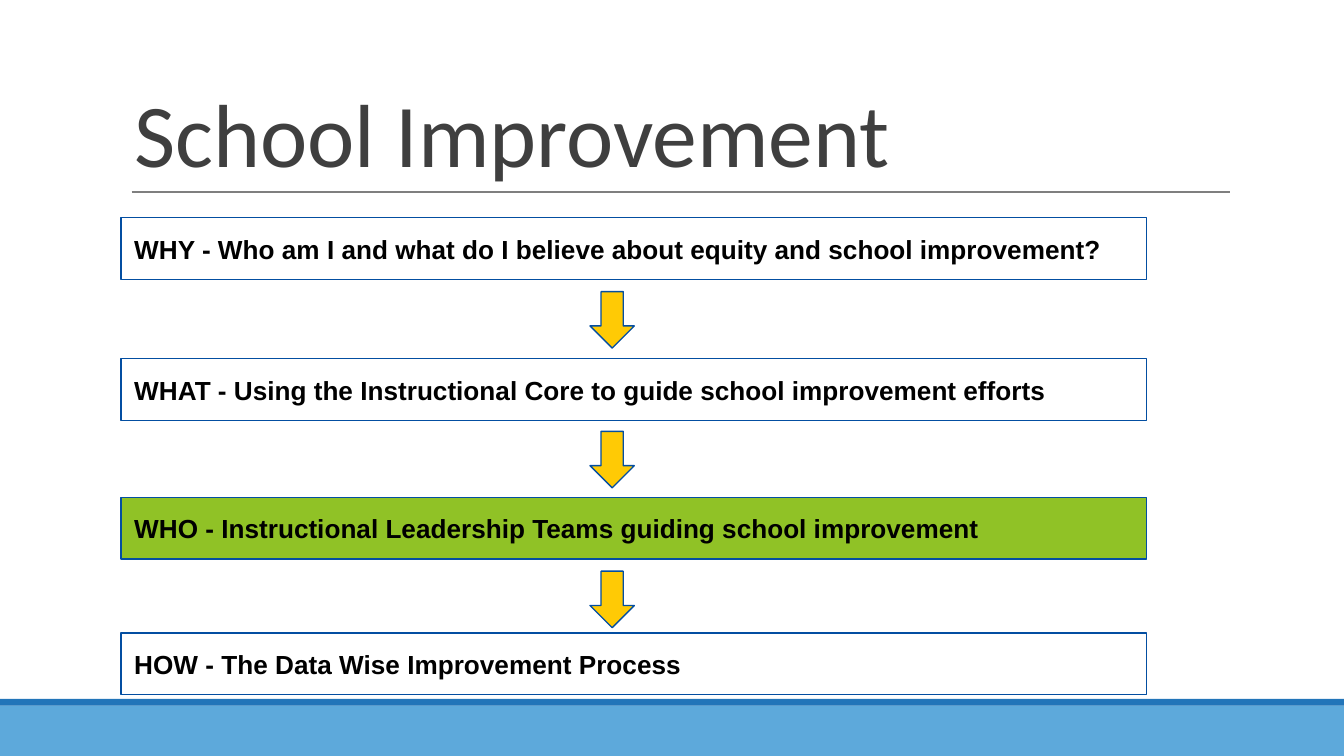
from pptx import Presentation
from pptx.dml.color import RGBColor
from pptx.enum.shapes import MSO_CONNECTOR, MSO_SHAPE
from pptx.enum.text import MSO_ANCHOR, PP_ALIGN
from pptx.oxml.ns import qn
from pptx.util import Inches, Pt
from lxml.etree import SubElement

# Content: text, top, fill
TITLE = "School Improvement"
STEPS = [
    ("WHY - Who am I and what do I believe about equity and school improvement?", 1.62, None),
    ("WHAT - Using the Instructional Core to guide school improvement efforts", 2.67, None),
    ("WHO - Instructional Leadership Teams guiding school improvement", 3.7, "90C226"),
    ("HOW - The Data Wise Improvement Process", 4.71, None),
]
BANDS = [(5.25, 0.38, "5DA9DB"), (5.2, 0.05, "2275B9")]
BLUE, GOLD = "034EA1", "FFCA05"
LEFT, WIDE, HIGH = 0.9, 7.63, 0.46


def color(code):
    return RGBColor.from_string(code)


def write(shape, text, size, font, code, bold=False, anchor=MSO_ANCHOR.MIDDLE,
          pad=0.1, space=None):
    frame = shape.text_frame
    frame.word_wrap = True
    frame.vertical_anchor = anchor
    frame.margin_left = frame.margin_right = Inches(0.1)
    frame.margin_top = frame.margin_bottom = Inches(pad)
    para = frame.paragraphs[0]
    para.alignment = PP_ALIGN.LEFT
    if space:
        para.line_spacing = space
    run = para.add_run()
    run.text = text
    run.font.size, run.font.name, run.font.bold = Pt(size), font, bold
    run.font.color.rgb = color(code)


def draw(kind, left, top, width, height, fill=None, line=None):
    shape = slide.shapes.add_shape(
        kind, Inches(left), Inches(top), Inches(width), Inches(height))
    shape.shadow.inherit = False
    if fill:
        shape.fill.solid()
        shape.fill.fore_color.rgb = color(fill)
    else:
        shape.fill.background()
    if line:
        shape.line.color.rgb = color(line)
        shape.line.width = Pt(0.75)
    else:
        shape.line.fill.background()
    return shape


# Wide 16:9 slide
deck = Presentation()
deck.slide_width = Inches(10)
deck.slide_height = deck.slide_width * 9 // 16
slide = deck.slides.add_slide(deck.slide_layouts[5])

# Footer bands
for top, height, fill in BANDS:
    draw(MSO_SHAPE.RECTANGLE, 0, top, 10, height, fill)

# Title and rule
title = slide.shapes.title
title.left, title.top = Inches(LEFT), Inches(0.24)
title.width, title.height = Inches(9.04), Inches(1.19)
write(title, TITLE, 48, "Calibri", "3F3F3F", anchor=MSO_ANCHOR.BOTTOM,
      pad=0.05, space=0.85)
rule = slide.shapes.add_connector(
    MSO_CONNECTOR.STRAIGHT, Inches(0.98), Inches(1.43), Inches(9.15), Inches(1.43))
rule.line.color.rgb = color("7F7F7F")
rule.line.width = Pt(0.75)
SubElement(rule._element.spPr, qn("a:effectLst"))

# Steps
for text, top, fill in STEPS:
    box = draw(MSO_SHAPE.RECTANGLE, LEFT, top, WIDE, HIGH, fill, BLUE)
    write(box, text, 14, "Arial", "000000", bold=True)

# Arrows between steps
for i in range(len(STEPS) - 1):
    draw(MSO_SHAPE.DOWN_ARROW, 4.39, 2.17 + 1.04 * i, 0.33, 0.42, GOLD, BLUE)

deck.save("out.pptx")
